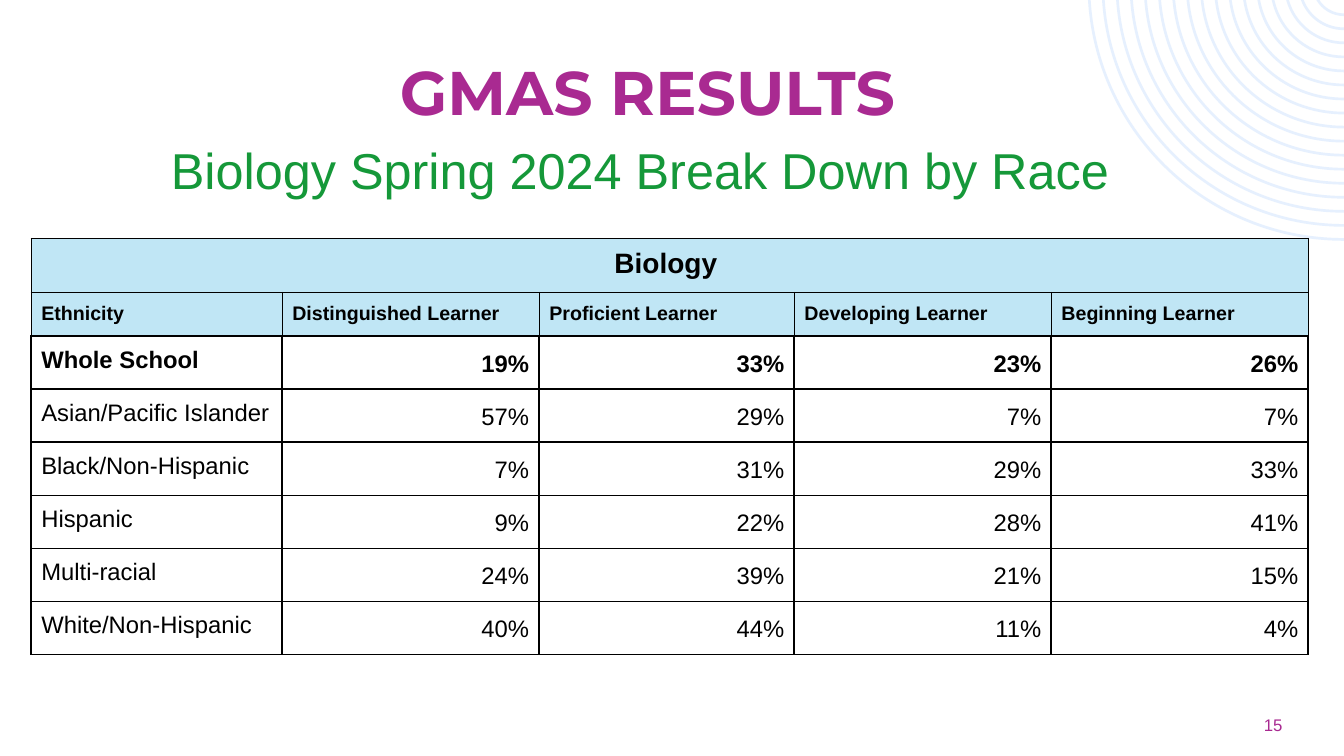
import math

import lxml.etree
import pptx
import pptx.dml.color
import pptx.enum.text
import pptx.oxml.ns
import pptx.util

Pt = pptx.util.Pt
ALIGN = pptx.enum.text.PP_ALIGN
ANCHOR = pptx.enum.text.MSO_ANCHOR
qn = pptx.oxml.ns.qn

COLORS = {
    "purple": "A92A91",
    "green": "159839",
    "ring": "E6F0FE",
    "header": "C0E6F5",
    "black": "000000",
}

TEXTS = [
    {"text": "15", "box": (870.5, 506.9, 77.8, 21.6), "anchor": ANCHOR.MIDDLE,
     "font": {"size": Pt(12), "name": "Arial", "bold": False}, "color": "purple"},
    {"text": "GMAS RESULTS", "box": (42.5, 35.3, 840.2, 60.5), "anchor": ANCHOR.TOP,
     "font": {"size": Pt(44), "name": "Montserrat", "bold": True}, "color": "purple"},
    {"text": "Biology Spring 2024 Break Down by Race", "box": (67, 95.8, 780.5, 51.1),
     "anchor": ANCHOR.TOP,
     "font": {"size": Pt(36), "name": "Arial", "bold": False}, "color": "green"},
]

TABLE_TITLE = "Biology "
TABLE_HEADER = ["Ethnicity", "Distinguished Learner", "Proficient Learner",
                "Developing Learner", "Beginning Learner"]
TABLE_BODY = [
    ["Whole School", "19%", "33%", "23%", "26%"],
    ["Asian/Pacific Islander", "57%", "29%", "7%", "7%"],
    ["Black/Non-Hispanic", "7%", "31%", "29%", "33%"],
    ["Hispanic", "9%", "22%", "28%", "41%"],
    ["Multi-racial", "24%", "39%", "21%", "15%"],
    ["White/Non-Hispanic", "40%", "44%", "11%", "4%"],
]
TABLE_LEFT, TABLE_TOP = 22.3, 170.4
COLUMN_WIDTHS = [179.3, 183.6, 182.2, 183.6, 183.6]
ROW_HEIGHTS = [38.5, 31.4] + [37.86] * len(TABLE_BODY)
THIN, THICK = 0.94, 1.5

SLIDE_WIDTH, SLIDE_HEIGHT = 960, 540
RING_COUNT, RING_STEP, RING_THICKNESS = 17, 10.03, 1.9
RING_CENTER_Y, RING_FIRST_RADIUS = -11.2, 22.7


def rgb(name):
    return pptx.dml.color.RGBColor.from_string(COLORS[name])


def set_values(target, values):
    for name, value in values.items():
        setattr(target, name, value)


def write(paragraph, text, font, color, alignment):
    paragraph.alignment = alignment
    run = paragraph.add_run()
    run.text = text
    set_values(run.font, font)
    run.font.color.rgb = rgb(color)


def arc_points(radius):
    """Start, two Bezier handles and end, from the top edge to the right edge."""
    start = math.asin(-RING_CENTER_Y / radius)
    handle = 4 / 3 * math.tan((math.pi / 2 - start) / 4)
    cosine, sine = math.cos(start), math.sin(start)
    units = [(cosine, sine), (cosine - handle * sine, sine + handle * cosine),
             (handle, 1), (0, 1)]
    return [(Pt(SLIDE_WIDTH - radius * x), Pt(RING_CENTER_Y + radius * y))
            for x, y in units]


def curve_arcs(rings):
    """Turn the handle and end points of each arc into one cubic curve."""
    for start in list(rings._element.iter(qn("a:moveTo"))):
        lines = list(start.itersiblings(qn("a:lnTo")))[:7]
        for arc in (lines[:3], lines[4:]):
            curve = lxml.etree.Element(qn("a:cubicBezTo"))
            arc[0].addprevious(curve)
            for line in arc:
                curve.append(line[0])
                line.getparent().remove(line)


def add_rings(slide):
    builder = None
    for index in range(RING_COUNT):
        radius = RING_FIRST_RADIUS + RING_STEP * index
        outline = arc_points(radius) + arc_points(radius - RING_THICKNESS)[::-1]
        if builder is None:
            builder = slide.shapes.build_freeform(*outline[0])
        else:
            builder.move_to(*outline[0])
        builder.add_line_segments(outline[1:], close=True)
    rings = builder.convert_to_shape()
    curve_arcs(rings)
    rings.shadow.inherit = False
    rings.fill.solid()
    rings.fill.fore_color.rgb = rgb("ring")
    rings.line.fill.background()


def add_text(slide, item):
    box = slide.shapes.add_textbox(*map(Pt, item["box"]))
    set_values(box.text_frame, {
        "word_wrap": True, "vertical_anchor": item["anchor"],
        "margin_left": Pt(7.2), "margin_right": Pt(7.2),
        "margin_top": Pt(3.6), "margin_bottom": Pt(3.6)})
    write(box.text_frame.paragraphs[0], item["text"], item["font"], item["color"],
          ALIGN.CENTER)


def set_borders(cell, widths):
    """Draw the borders; widths run left, right, top, bottom."""
    properties = cell._tc.get_or_add_tcPr()
    for side, width in zip("LRTB", widths):
        line = lxml.etree.SubElement(properties, qn(f"a:ln{side}"), w=str(Pt(width)))
        fill = lxml.etree.SubElement(line, qn("a:solidFill"))
        lxml.etree.SubElement(fill, qn("a:srgbClr"), val=COLORS["black"])


def format_cell(cell, row):
    if row == 0:
        widths = [THIN] * 4
    elif row == 1:
        widths = [THIN, THIN, THIN, THICK]
    else:
        widths = [THICK] * 4
    set_borders(cell, widths)
    if row < 2:
        cell.fill.solid()
        cell.fill.fore_color.rgb = rgb("header")
    else:
        cell.fill.background()
    set_values(cell, {f"margin_{side}": Pt(7.2)
                      for side in ("left", "right", "top", "bottom")})
    cell.vertical_anchor = ANCHOR.TOP


def add_results_table(slide):
    rows = [[TABLE_TITLE], TABLE_HEADER] + TABLE_BODY
    table = slide.shapes.add_table(
        len(rows), len(COLUMN_WIDTHS), Pt(TABLE_LEFT), Pt(TABLE_TOP),
        Pt(sum(COLUMN_WIDTHS)), Pt(sum(ROW_HEIGHTS))).table
    set_values(table, {"first_row": False, "horz_banding": False})
    for column, width in zip(table.columns, COLUMN_WIDTHS):
        column.width = Pt(width)
    for row, height in enumerate(ROW_HEIGHTS):
        table.rows[row].height = Pt(height)
        for cell in table.rows[row].cells:
            format_cell(cell, row)
    table.cell(0, 0).merge(table.cell(0, len(COLUMN_WIDTHS) - 1))

    for row, texts in enumerate(rows):
        size = {0: 20, 1: 14}.get(row, 17)
        font = {"size": Pt(size), "name": "Arial", "bold": row < 3}
        for column, text in enumerate(texts):
            paragraph = table.cell(row, column).text_frame.paragraphs[0]
            alignment = ALIGN.CENTER if row == 0 else ALIGN.LEFT
            if row > 1 and column > 0:
                alignment = ALIGN.RIGHT
                paragraph.line_spacing = 1.15
            write(paragraph, text, font, "black", alignment)


def main():
    presentation = pptx.Presentation()
    presentation.slide_width = Pt(SLIDE_WIDTH)
    presentation.slide_height = Pt(SLIDE_HEIGHT)
    slide = presentation.slides.add_slide(presentation.slide_layouts[6])
    add_rings(slide)
    for item in TEXTS:
        add_text(slide, item)
    add_results_table(slide)
    presentation.save("out.pptx")


if __name__ == "__main__":
    main()
